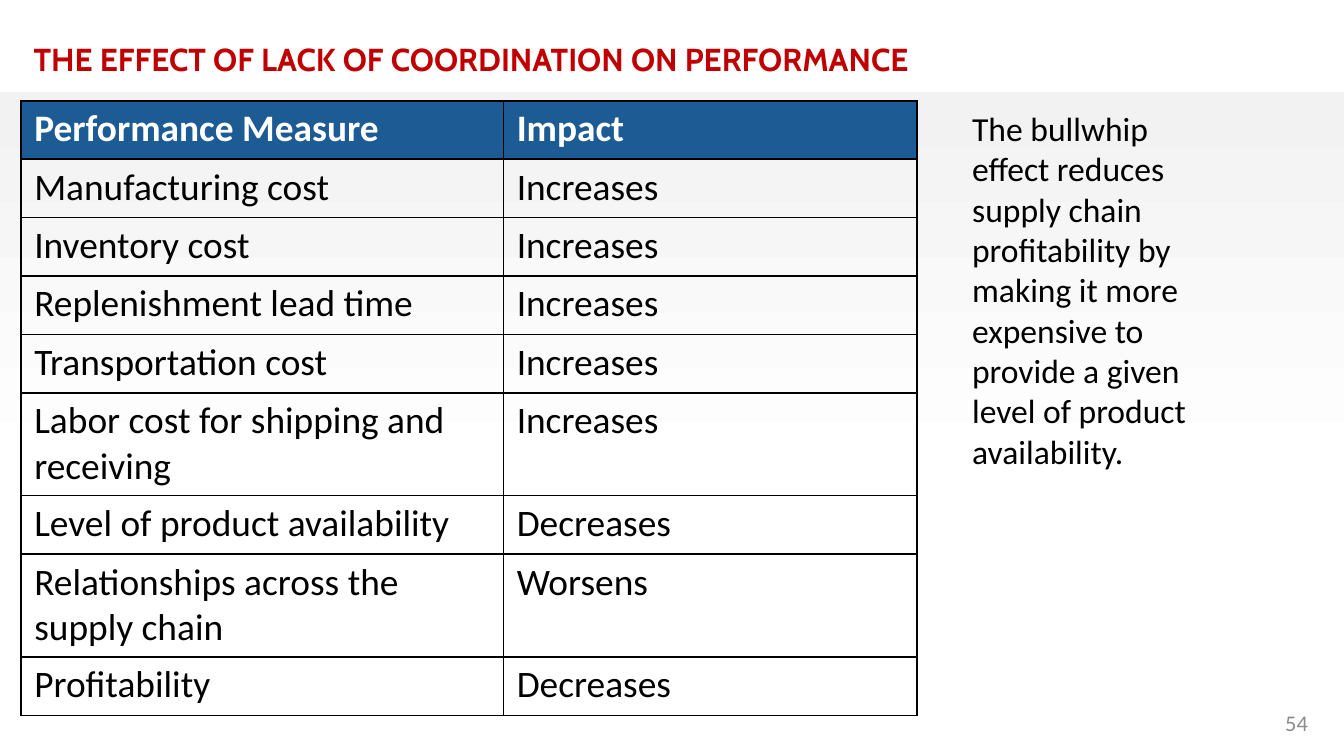
from dataclasses import dataclass

from lxml.etree import SubElement
from pptx import Presentation
from pptx.dml.color import RGBColor
from pptx.enum.shapes import MSO_SHAPE
from pptx.enum.text import MSO_ANCHOR, PP_ALIGN
from pptx.oxml.ns import qn
from pptx.util import Pt

PX = 4572  # EMU per px, 200 px to the inch


@dataclass(frozen=True)
class Theme:
    heading_font: str = "Cabin"
    body_font: str = "Calibri"
    title_size: int = 17
    table_size: int = 20
    note_size: int = 18
    number_size: int = 12
    title: str = "C00000"
    header: str = "1C5B93"
    text: str = "000000"
    number: str = "8C8C8C"
    white: str = "FFFFFF"
    shade: str = "F2F2F2"


THEME = Theme()


def format_text(text_frame, font, size, color, bold=False, align=PP_ALIGN.LEFT):
    text_frame.word_wrap = True
    for paragraph in text_frame.paragraphs:
        paragraph.alignment = align
        for run in paragraph.runs:
            run.font.name = font
            run.font.size = Pt(size)
            run.font.bold = bold
            run.font.color.rgb = RGBColor.from_string(color)


def add_borders(cell, color, width):
    """Draw all four cell edges; call before setting the fill, which must follow them."""
    properties = cell._tc.get_or_add_tcPr()
    for edge in ("a:lnL", "a:lnR", "a:lnT", "a:lnB"):
        line = SubElement(properties, qn(edge), w=str(Pt(width)))
        solid_fill = SubElement(line, qn("a:solidFill"))
        SubElement(solid_fill, qn("a:srgbClr"), val=color)


presentation = Presentation()
presentation.slide_width = 2000 * PX
presentation.slide_height = 1125 * PX
slide = presentation.slides.add_slide(presentation.slide_layouts[5])

# Background
background = slide.shapes.add_shape(
    MSO_SHAPE.RECTANGLE, -2 * PX, 137 * PX, 2002 * PX, 988 * PX
)
background.shadow.inherit = False
background.line.fill.background()
background.fill.gradient()
background.fill.gradient_angle = 270
for stop, position, color in zip(
    background.fill.gradient_stops, (0, 0.58), (THEME.shade, THEME.white)
):
    stop.position = position
    stop.color.rgb = RGBColor.from_string(color)

# Title
title = slide.shapes.title
title.left, title.top, title.width, title.height = 30 * PX, 49 * PX, 1414 * PX, 78 * PX
title.text_frame.text = "THE EFFECT OF LACK OF COORDINATION ON PERFORMANCE"
title.text_frame.vertical_anchor = MSO_ANCHOR.TOP
format_text(title.text_frame, THEME.heading_font, THEME.title_size, THEME.title, bold=True)

# Performance table
rows = [
    ("Performance Measure", "Impact"),
    ("Manufacturing cost", "Increases"),
    ("Inventory cost", "Increases"),
    ("Replenishment lead time", "Increases"),
    ("Transportation cost", "Increases"),
    ("Labor cost for shipping and receiving", "Increases"),
    ("Level of product availability", "Decreases"),
    ("Relationships across the supply chain", "Worsens"),
    ("Profitability", "Decreases"),
]
one_line, two_lines = 87, 153
two_line_rows = (5, 7)
row_heights = [two_lines if index in two_line_rows else one_line for index in range(len(rows))]
column_widths = (718, 616)

table = slide.shapes.add_table(
    len(rows), len(column_widths),
    31 * PX, 150 * PX, sum(column_widths) * PX, sum(row_heights) * PX,
).table
table.horz_banding = False
for column, width in zip(table.columns, column_widths):
    column.width = width * PX
for row_index, (texts, height) in enumerate(zip(rows, row_heights)):
    is_header = row_index == 0
    table.rows[row_index].height = height * PX
    for column_index, text in enumerate(texts):
        cell = table.cell(row_index, column_index)
        cell.text_frame.text = text
        cell.margin_top = cell.margin_bottom = 8 * PX
        add_borders(cell, THEME.text, 1)
        if is_header:
            cell.fill.solid()
            cell.fill.fore_color.rgb = RGBColor.from_string(THEME.header)
        else:
            cell.fill.background()
        color = THEME.white if is_header else THEME.text
        format_text(cell.text_frame, THEME.body_font, THEME.table_size, color, bold=is_header)

# Side note
note = slide.shapes.add_textbox(1427 * PX, 151 * PX, 408 * PX, 566 * PX)
note.text_frame.text = (
    "The bullwhip effect reduces supply chain profitability by making it more "
    "expensive to provide a given level of product availability."
)
format_text(note.text_frame, THEME.body_font, THEME.note_size, THEME.text)

# Slide number
number = slide.shapes.add_textbox(1500 * PX, 1046 * PX, 466 * PX, 60 * PX)
number.text_frame.text = "54"
number.text_frame.vertical_anchor = MSO_ANCHOR.MIDDLE
format_text(
    number.text_frame, THEME.body_font, THEME.number_size, THEME.number, align=PP_ALIGN.RIGHT
)

presentation.save("out.pptx")
